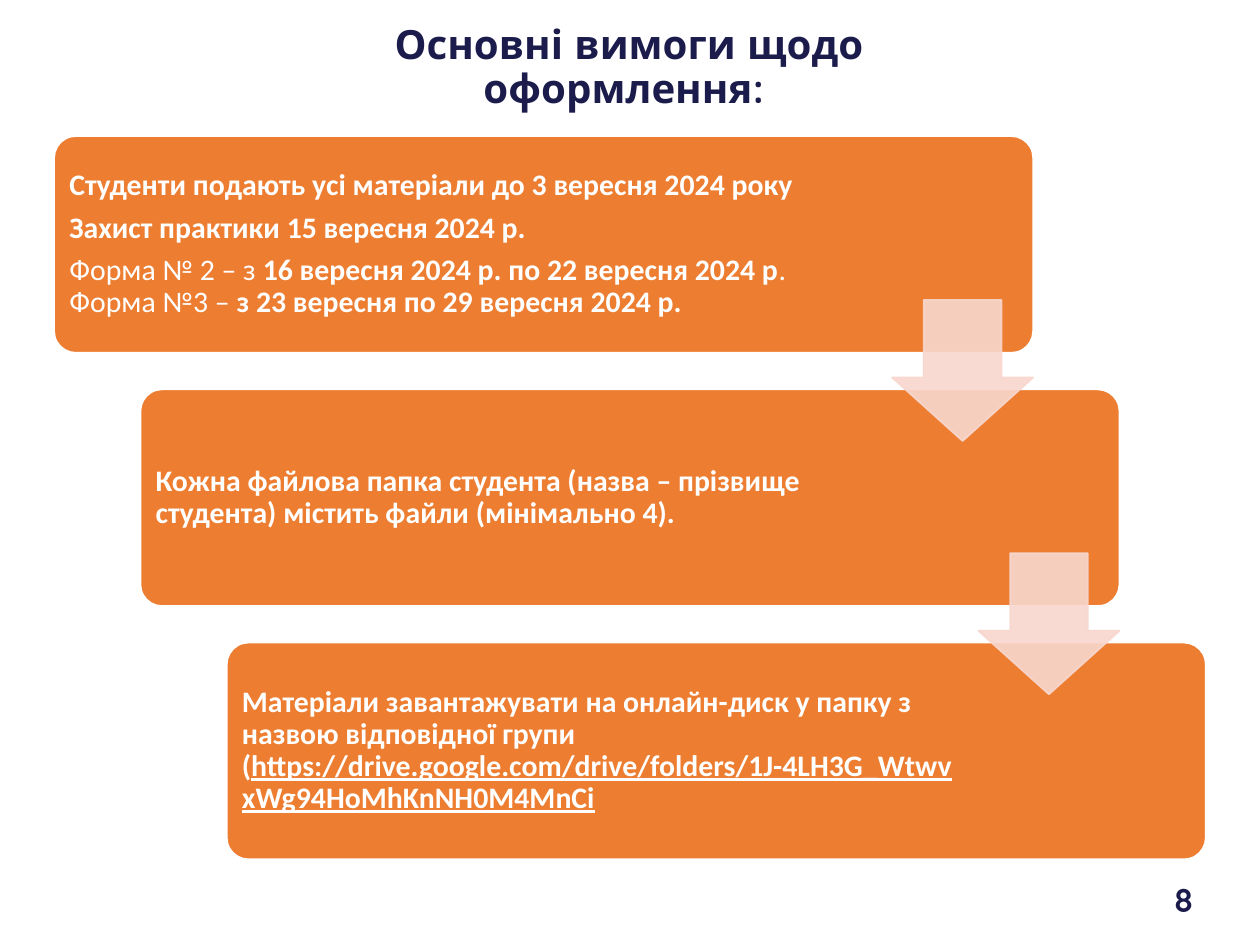
from dataclasses import dataclass

from lxml.etree import SubElement
from pptx import Presentation
from pptx.dml.color import RGBColor
from pptx.enum.shapes import MSO_SHAPE as Preset
from pptx.enum.text import MSO_ANCHOR as Anchor, MSO_AUTO_SIZE as AutoSize, PP_ALIGN as Align
from pptx.oxml.ns import qn
from pptx.util import Inches, Pt


@dataclass(frozen=True)
class Theme:
    """Colours, fonts and type sizes of the slide."""
    navy: RGBColor = RGBColor.from_string("1C1C4C")
    orange: RGBColor = RGBColor.from_string("ED7D31")
    blush: RGBColor = RGBColor.from_string("F8D7CE")
    white: RGBColor = RGBColor.from_string("FFFFFF")
    heading_font: str = "Quicksand"
    body_font: str = "Calibri"
    title_size: Pt = Pt(23)
    number_size: Pt = Pt(19)
    body_size: Pt = Pt(17)


THEME = Theme()
BOLD, PLAIN, LINK = (True, False), (False, False), (True, True)
REQUIREMENTS = [
    [
        [("Студенти подають усі матеріали до 3 вересня 2024 року", BOLD)],
        [("Захист практики 15 вересня 2024 р.", BOLD)],
        [
            ("Форма № 2 – з ", PLAIN),
            ("16 вересня 2024 р. по 22 вересня 2024 р", BOLD),
            (". Форма №3 – ", PLAIN),
            ("з 23 вересня по 29 вересня 2024 р.", BOLD),
        ],
    ],
    [[("Кожна файлова папка студента (назва – прізвище "
       "студента) містить файли (мінімально 4).", BOLD)]],
    [[
        ("Матеріали завантажувати на онлайн-диск у папку з назвою відповідної групи (", BOLD),
        ("https://drive.google.com/drive/folders/1J-4LH3G_WtwvxWg94HoMhKnNH0M4MnCi", LINK),
    ]],
]
TEXT_WIDTHS = [5.91, 5.87, 5.87]


def place(part, box):
    """Move a part to a box of left, top, width and height in inches."""
    part.left, part.top, part.width, part.height = map(Inches, box)


def set_frame(frame, inset=None):
    """Centre a text frame vertically, wrap it and set its insets."""
    frame.word_wrap = True
    frame.auto_size = AutoSize.NONE
    frame.vertical_anchor = Anchor.MIDDLE
    if inset is not None:
        frame.margin_left = frame.margin_right = Inches(inset)
        frame.margin_top = frame.margin_bottom = Inches(inset)


def write(paragraph, runs, font, size, color, align=Align.LEFT, after=0):
    """Fill a paragraph run by run."""
    paragraph.alignment = align
    paragraph.line_spacing = 0.9
    paragraph.space_before = Pt(0)
    paragraph.space_after = Pt(after)
    for text, (bold, underline) in runs:
        run = paragraph.add_run()
        run.text = text
        run.font.name, run.font.size, run.font.bold = font, size, bold
        run.font.color.rgb = color
        if underline:
            run.font.underline = True


def add_title(slide, box):
    """Place the heading in the title placeholder."""
    heading = slide.shapes.title
    place(heading, box)
    set_frame(heading.text_frame)
    write(heading.text_frame.paragraphs[0], [("Основні вимоги щодо оформлення: ", BOLD)],
          THEME.heading_font, THEME.title_size, THEME.navy, Align.CENTER)


def add_page_number(slide, box):
    """Place the page number."""
    number = slide.shapes.add_textbox(*map(Inches, box))
    set_frame(number.text_frame)
    write(number.text_frame.paragraphs[0], [("8", BOLD)],
          THEME.heading_font, THEME.number_size, THEME.navy, Align.RIGHT, after=6)


def add_block(slide, preset, box, adjustments, fill, line):
    """Draw a flat preset shape with a one-point outline."""
    block = slide.shapes.add_shape(preset, *map(Inches, box))
    block.shadow.inherit = False
    for index, value in enumerate(adjustments):
        block.adjustments[index] = value
    block.fill.solid()
    block.fill.fore_color.rgb = fill
    block.line.color.rgb = line
    block.line.width = Pt(1)
    return block


def add_requirement(slide, box, text_width, paragraphs):
    """Draw one step of the cascade with its text."""
    left, top, _, height = box
    add_block(slide, Preset.ROUNDED_RECTANGLE, box, [0.1], THEME.orange, THEME.white)
    text_box = (left + 0.05, top + 0.05, text_width, height - 0.1)
    frame = slide.shapes.add_textbox(*map(Inches, text_box)).text_frame
    set_frame(frame, inset=0.07)
    for index, runs in enumerate(paragraphs):
        paragraph = frame.add_paragraph() if index else frame.paragraphs[0]
        write(paragraph, runs, THEME.body_font, THEME.body_size, THEME.white, after=6)


def add_step_arrow(slide, box):
    """Draw a translucent arrow to the next step."""
    arrow = add_block(slide, Preset.DOWN_ARROW, box, [0.55, 0.45], THEME.blush, THEME.blush)
    for color in arrow._element.spPr.iter(qn("a:srgbClr")):
        SubElement(color, qn("a:alpha"), val="90000")


def add_cascade(slide, box):
    """Lay the requirements out as descending steps joined by arrows."""
    left, top, width, height = box
    step_width, step_height, arrow_side = 7.77, 1.72, 1.12
    last = len(REQUIREMENTS) - 1
    shift, drop = (width - step_width) / last, (height - step_height) / last
    steps = [(left + i * shift, top + i * drop, step_width, step_height)
             for i in range(last + 1)]
    for step, text_width, paragraphs in zip(steps, TEXT_WIDTHS, REQUIREMENTS):
        add_requirement(slide, step, text_width, paragraphs)
    for step_left, step_top, _, _ in steps[:-1]:
        add_step_arrow(slide, (step_left + step_width - arrow_side, step_top + 1.3,
                               arrow_side, arrow_side))


def main():
    """Build and save the slide."""
    deck = Presentation()
    deck.slide_width, deck.slide_height = Inches(10), Inches(7.5)
    slide = deck.slides.add_slide(deck.slide_layouts[5])
    add_title(slide, (1.91, 0.24, 6.17, 0.61))
    add_page_number(slide, (7.32, 6.96, 2.25, 0.4))
    add_cascade(slide, (0.43, 1.08, 9.14, 5.74))
    deck.save("out.pptx")


if __name__ == "__main__":
    main()
